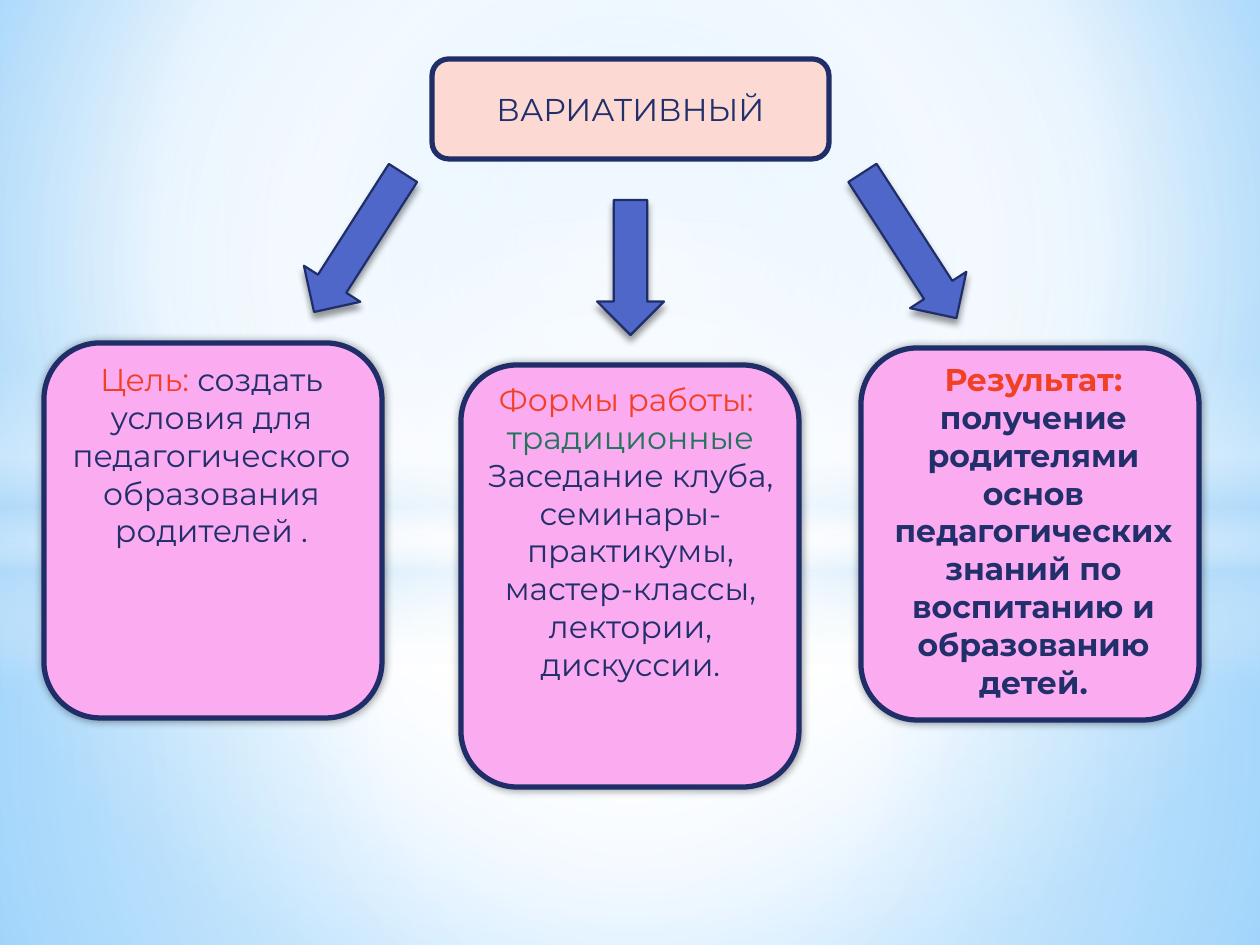
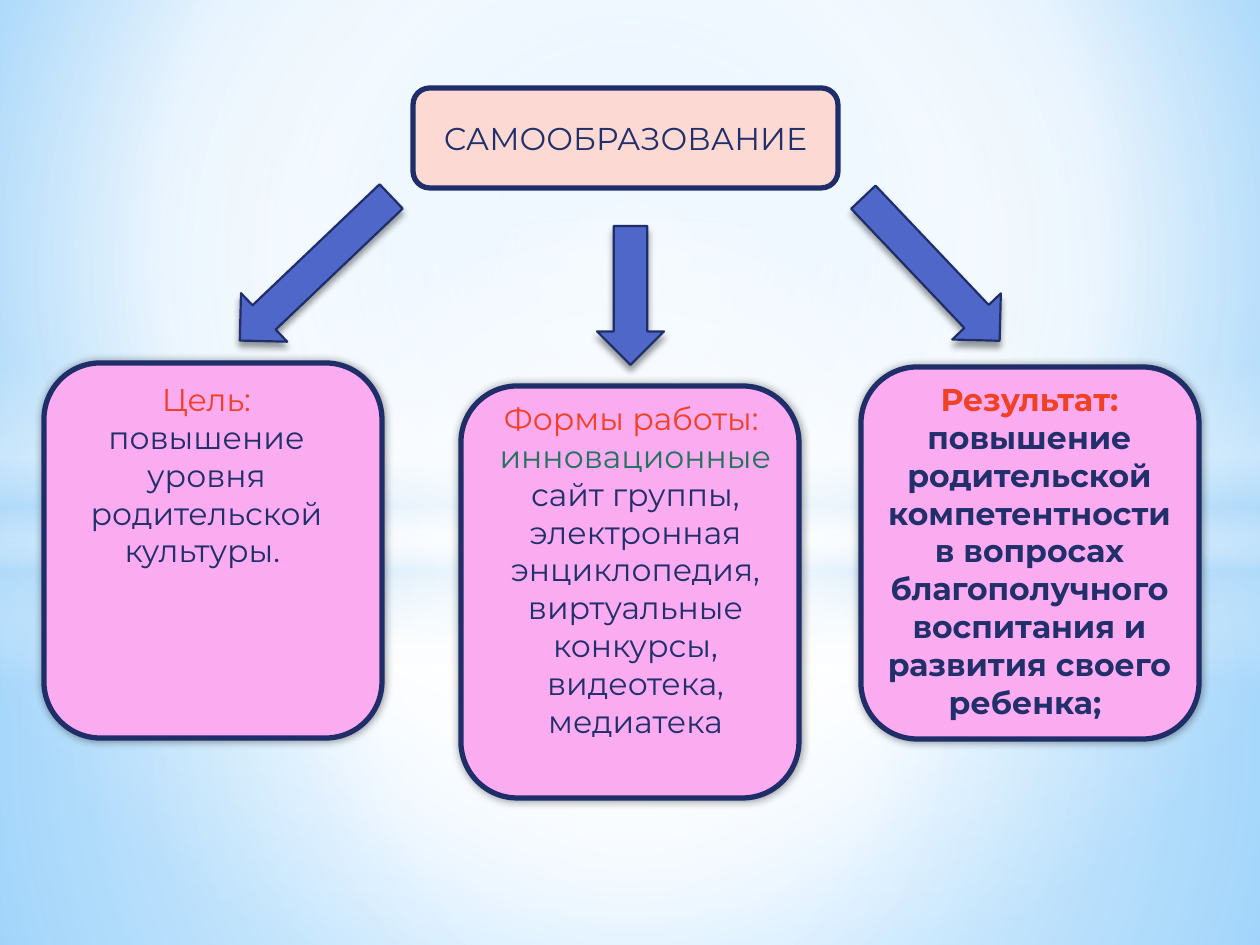
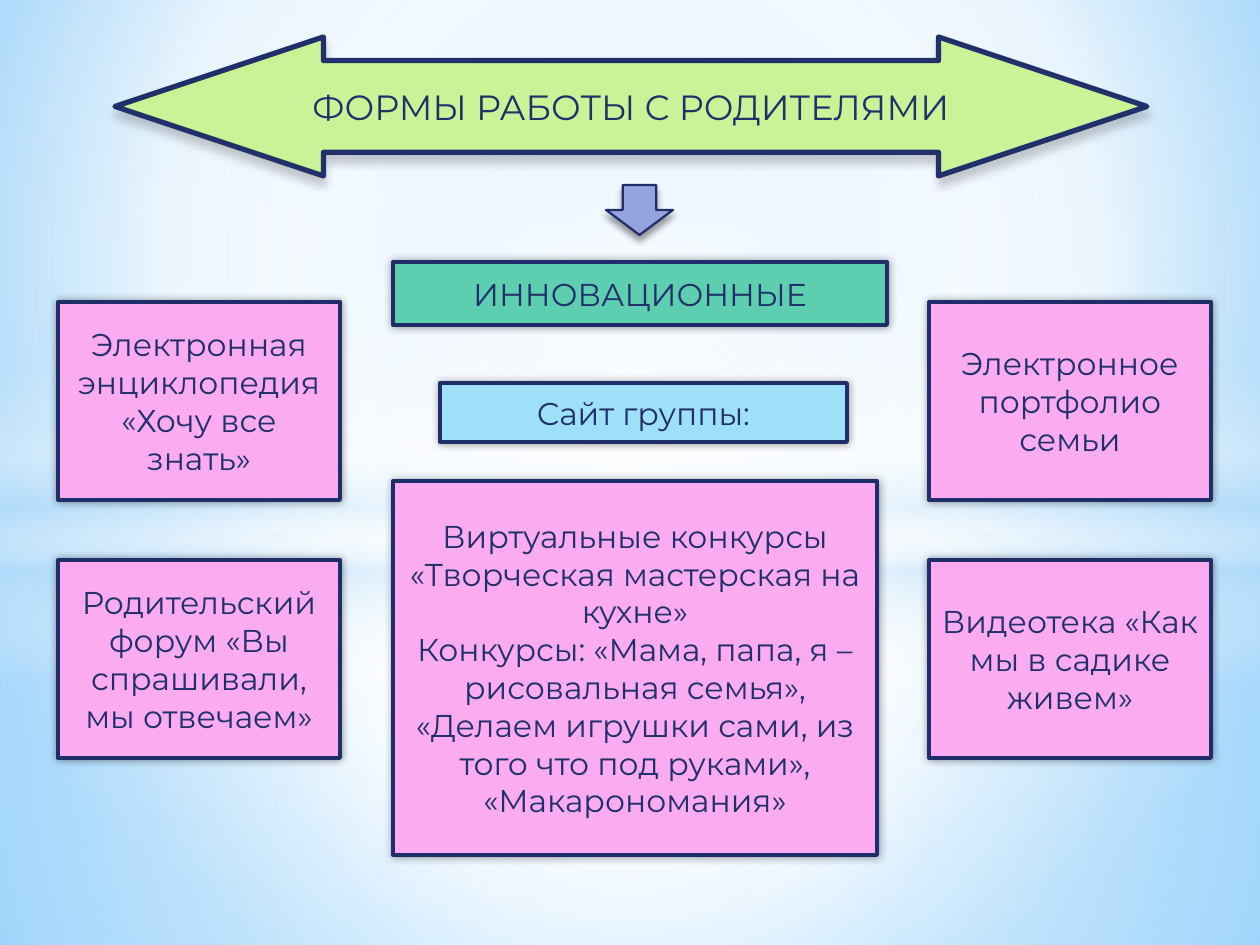
from collections import namedtuple

from lxml.etree import SubElement
from pptx import Presentation
from pptx.dml.color import RGBColor
from pptx.enum.shapes import MSO_SHAPE
from pptx.enum.text import MSO_ANCHOR, MSO_AUTO_SIZE, PP_ALIGN
from pptx.oxml.ns import qn
from pptx.util import Emu, Pt

FONT = "Montserrat"
OUTLINE, INK = "1F2E69", "21306A"
PINK, PEACH, LIME, GREEN, SKY = "FBABF0", "FCD9D3", "CAF297", "5DCEAF", "9EE0F8"
BLUE, PALE_BLUE = "4E67C8", "95A4DE"
RED, DARK_GREEN = "F14124", "23735D"
WHITE, HAZE = "FFFFFF", "B4DCFA"

# Shadow: opacity %, blur pt, distance pt
GLOW, DROP, SOFT_DROP = (40, 5, 0), (40, 4, 3), (20, 5, 4)
CENTRE = (50, 50, 50, 50)

Box = namedtuple("Box", "x y w h")
Column = namedtuple("Column", "card note arrow angle paragraphs bold", defaults=[False])


def px(length):
    return Emu(round(length * 914400 / 126))


def rgb(value):
    return RGBColor.from_string(value)


def inside(area, x, y, w, h):
    return Box(area.x + x, area.y + y, w, h)


def place(box):
    return [px(length) for length in box]


def add_color(parent, color, opacity=100):
    node = SubElement(parent, qn("a:srgbClr"), val=color)
    if opacity < 100:
        SubElement(node, qn("a:alpha"), val=str(opacity * 1000))


def set_gradient(fill, holder, stops, focus=None):
    """Radial gradient around focus, or a vertical one without it."""
    fill.solid()
    solid = holder.find(qn("a:solidFill"))
    gradient = holder.makeelement(qn("a:gradFill"), {"rotWithShape": "1"})
    holder.replace(solid, gradient)
    stop_list = SubElement(gradient, qn("a:gsLst"))
    for position, color, *opacity in stops:
        stop = SubElement(stop_list, qn("a:gs"), pos=str(position * 1000))
        add_color(stop, color, *opacity)
    if focus:
        route = SubElement(gradient, qn("a:path"))
        route.set("path", "circle")
        edges = {side: str(part * 1000) for side, part in zip("ltrb", focus)}
        SubElement(route, qn("a:fillToRect"), edges)
    else:
        SubElement(gradient, qn("a:lin"), ang="5400000", scaled="0")


def write(shape, paragraphs, size=18, color=INK, bold=False,
          anchor=MSO_ANCHOR.MIDDLE, wrap=True):
    """Each paragraph is a list of (text, colour) runs or a plain string."""
    frame = shape.text_frame
    frame.word_wrap = wrap
    frame.vertical_anchor = anchor
    for index, runs in enumerate(paragraphs):
        paragraph = frame.add_paragraph() if index else frame.paragraphs[0]
        paragraph.alignment = PP_ALIGN.CENTER
        for words, run_color in [(runs, color)] if isinstance(runs, str) else runs:
            run = paragraph.add_run()
            run.text = words
            run.font.name, run.font.size, run.font.bold = FONT, Pt(size), bold
            run.font.color.rgb = rgb(run_color)


def draw(slide, kind, box, fill, line=OUTLINE, width=2.25, shadow=None, angle=0):
    shape = slide.shapes.add_shape(kind, *place(box))
    shape.rotation = angle
    shape.fill.solid()
    shape.fill.fore_color.rgb = rgb(fill)
    shape.line.color.rgb = rgb(line)
    shape.line.width = Pt(width)
    shape.shadow.inherit = False
    if shadow:
        opacity, blur, distance = shadow
        effects = shape._element.spPr.find(qn("a:effectLst"))
        outer = SubElement(effects, qn("a:outerShdw"), blurRad=str(Pt(blur)),
                           dist=str(Pt(distance)), dir="5400000",
                           algn="ctr", rotWithShape="0")
        add_color(outer, "000000", opacity)
    return shape


# Shared background
def set_backdrop(master):
    set_gradient(master.background.fill, master.element.find(".//" + qn("p:bgPr")),
                 [(0, "9ED5FF"), (60, WHITE), (100, "5BB9FF")], (20, 10, 20, 60))


def haze(slide):
    lower = [(0, WHITE, 91), (37, WHITE, 76), (100, HAZE, 79)]
    upper = [(0, WHITE, 89), (48, WHITE, 62), (100, HAZE, 79)]
    horizon = [(0, WHITE, 0), (29, WHITE, 30), (45, HAZE, 40),
               (55, WHITE, 26), (65, HAZE, 60), (100, WHITE, 0)]
    shine = [(0, WHITE), (54, WHITE, 0)]
    for kind, box, stops, focus in [
        (MSO_SHAPE.RECTANGLE, Box(0, 533, 1260, 412), lower, CENTRE),
        (MSO_SHAPE.RECTANGLE, Box(0, 0, 1260, 533), upper, CENTRE),
        (MSO_SHAPE.RECTANGLE, Box(0, 365, 1260, 315), horizon, None),
        (MSO_SHAPE.OVAL, Box(0, 220, 1260, 703), shine, CENTRE),
    ]:
        layer = slide.shapes.add_shape(kind, *place(box))
        layer.shadow.inherit = False
        layer.line.fill.background()
        set_gradient(layer.fill, layer._element.spPr, stops, focus)


# Card with its arrow and text
def draw_column(slide, area, column):
    card = inside(area, *column.card)
    draw(slide, MSO_SHAPE.ROUNDED_RECTANGLE, card, PINK, width=3, shadow=GLOW)
    draw(slide, MSO_SHAPE.DOWN_ARROW, inside(area, *column.arrow), BLUE,
         width=1.25, shadow=DROP, angle=column.angle)
    note = slide.shapes.add_textbox(*place(inside(card, *column.note)))
    write(note, column.paragraphs, bold=column.bold, anchor=MSO_ANCHOR.TOP)
    note.text_frame.auto_size = MSO_AUTO_SIZE.SHAPE_TO_FIT_TEXT


# Heading that leads to three cards
def scheme_slide(slide, area, heading, heading_box, columns):
    haze(slide)
    title = draw(slide, MSO_SHAPE.ROUNDED_RECTANGLE, inside(area, *heading_box),
                 PEACH, width=3)
    write(title, [heading])
    for column in columns:
        draw_column(slide, area, column)


# Four tiles around a central list
def forms_slide(slide, area):
    haze(slide)
    tiles = [
        ["Электронная энциклопедия «Хочу все знать»", "Электронное портфолио семьи"],
        ["Родительский форум «Вы спрашивали, мы отвечаем»",
         "Видеотека «Как мы в садике живем»"],
    ]
    blocks = [
        ((335, 225, 494, 63), GREEN, ["ИННОВАЦИОННЫЕ"]),
        ((382, 346, 407, 59), SKY, ["Сайт группы:"]),
        ((335, 444, 484, 374), PINK, [
            "Виртуальные конкурсы «Творческая мастерская на кухне»",
            "Конкурсы: «Мама, папа, я – рисовальная семья», «Делаем игрушки сами, "
            "из того что под руками», «Макарономания»"]),
    ]
    for row, names in enumerate(tiles):
        for side, name in enumerate(names):
            blocks.append(((871 * side, 265 + 258 * row, 282, 198), PINK, [name]))
    for box, fill, paragraphs in blocks:
        block = draw(slide, MSO_SHAPE.RECTANGLE, inside(area, *box), fill, shadow=GLOW)
        write(block, paragraphs)

    banner = draw(slide, MSO_SHAPE.LEFT_RIGHT_ARROW, inside(area, 57, 0, 1032, 139),
                  LIME, line=INK, width=3, shadow=SOFT_DROP)
    banner.adjustments[0], banner.adjustments[1] = 0.66, 1.5
    write(banner, ["ФОРМЫ РАБОТЫ С РОДИТЕЛЯМИ"], size=20, wrap=False)
    draw(slide, MSO_SHAPE.DOWN_ARROW, inside(area, 548, 148, 67, 50),
         PALE_BLUE, width=1.25, shadow=DROP)


VARIATIVE = [
    Column((0, 284, 338, 375), (5, 11, 325, 204), (281, 101, 67, 165), 32.6, [
        [("Цель: ", RED),
         ("создать условия для педагогического образования родителей .", INK)]]),
    Column((417, 306, 338, 422), (12, 9, 315, 357), (553, 141, 67, 135), 0, [
        [("Формы работы: ", RED)],
        [("традиционные", DARK_GREEN)],
        "Заседание клуба, семинары-практикумы, мастер-классы, лектории, дискуссии."]),
    Column((817, 289, 338, 372), (15, 6, 315, 357), (832, 100, 67, 173), 327.1, [
        [("Результат: ", RED),
         ("получение родителями основ педагогических знаний по воспитанию и "
          "образованию детей.", INK)]], True),
]
SELF_EDUCATION = [
    Column((0, 275, 338, 375), (5, 11, 315, 204), (238, 76, 67, 209), 46.4, [
        [("Цель: ", RED), ("повышение уровня родительской культуры. ", INK)]]),
    Column((417, 298, 338, 412), (12, 7, 325, 357), (553, 138, 67, 139), 0, [
        [("Формы работы: ", RED)],
        [("инновационные", DARK_GREEN)],
        "сайт группы, электронная энциклопедия, виртуальные конкурсы, "
        "видеотека, медиатека"]),
    Column((817, 279, 338, 372), (6, 7, 325, 357), (854, 82, 67, 198), 316.5, [
        [("Результат:", RED)],
        "повышение родительской компетентности в вопросах благополучного "
        "воспитания и развития своего ребенка; "], True),
]


def main():
    deck = Presentation()
    deck.slide_width, deck.slide_height = px(1260), px(945)
    set_backdrop(deck.slide_master)
    blank = deck.slide_layouts[6]
    scheme_slide(deck.slides.add_slide(blank), Box(44, 59, 1155, 728),
                 "ВАРИАТИВНЫЙ", (388, 0, 397, 100), VARIATIVE)
    scheme_slide(deck.slides.add_slide(blank), Box(44, 88, 1155, 710),
                 "САМООБРАЗОВАНИЕ", (369, 0, 425, 100), SELF_EDUCATION)
    forms_slide(deck.slides.add_slide(blank), Box(58, 37, 1153, 818))
    deck.save("out.pptx")


if __name__ == "__main__":
    main()
